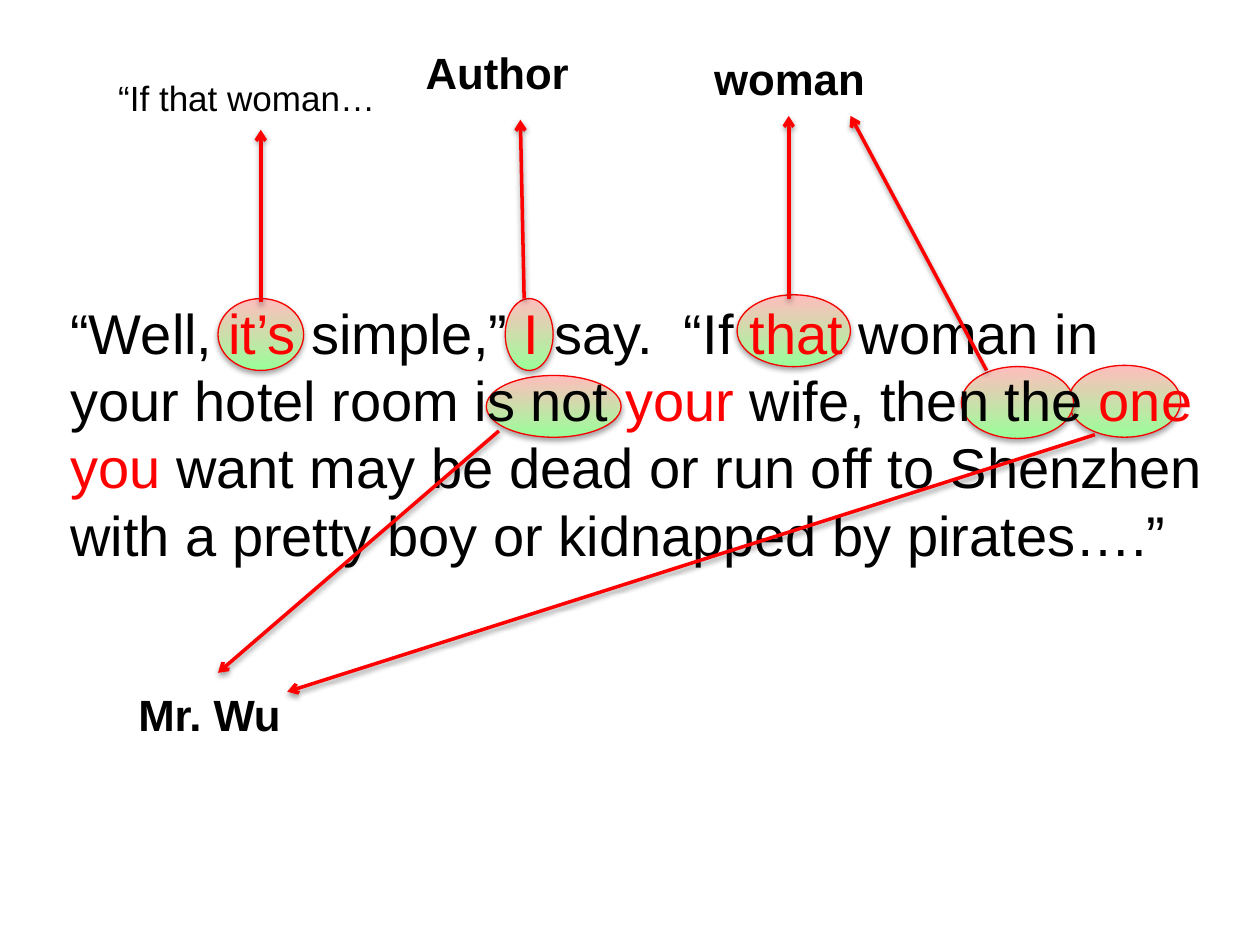
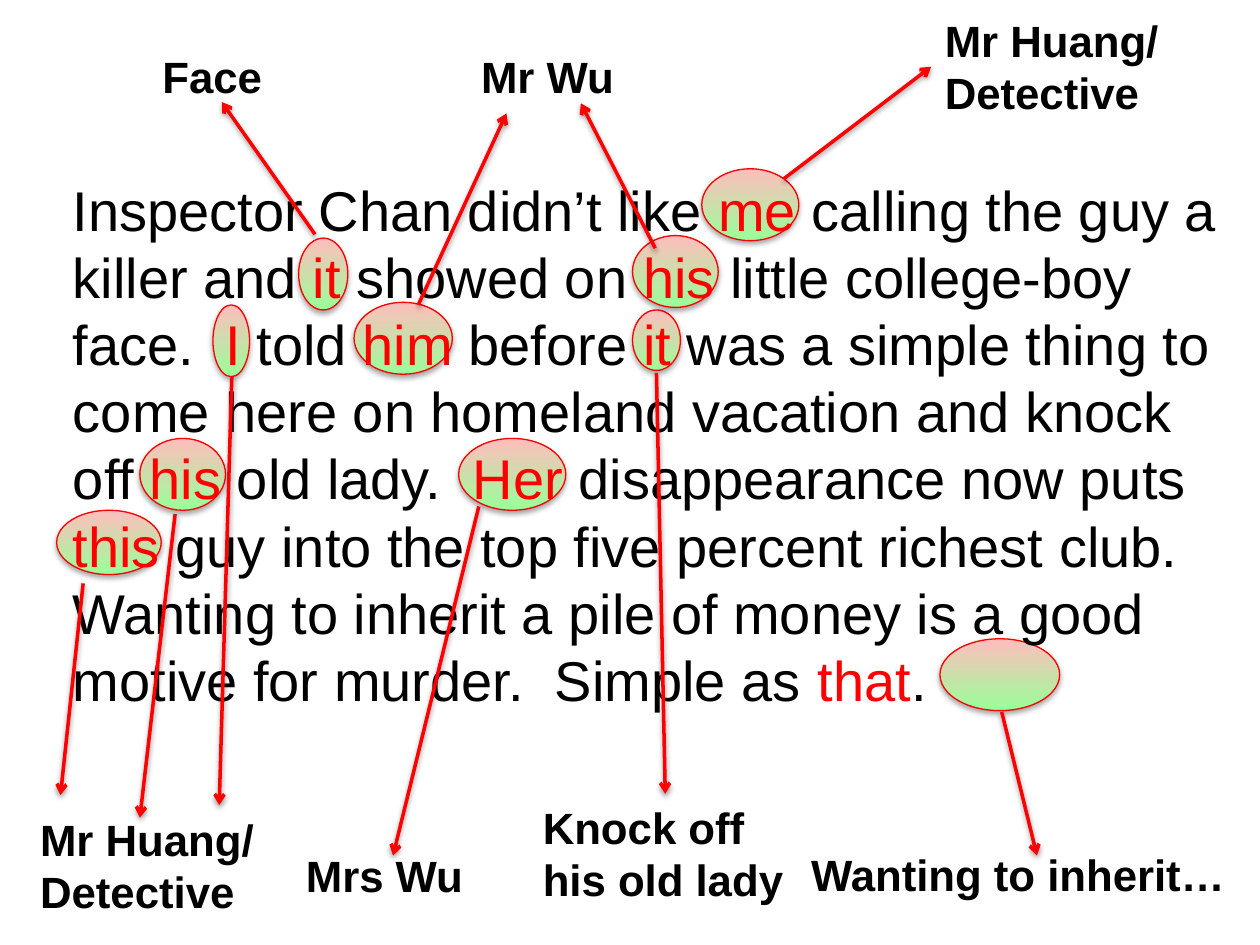
from dataclasses import dataclass

from lxml import etree
from pptx import Presentation
from pptx import util as u
from pptx.dml.color import RGBColor
from pptx.enum import shapes, text
from pptx.oxml.ns import qn


@dataclass(frozen=True)
class Theme:
    font: str = "Arial"
    ink: str = "000000"
    reference: str = "FF0000"
    oval_line: str = "F90000"
    oval_bottom: str = "99FF99"
    oval_top: str = "FFBDBD"
    body_size: int = 32
    label_size: int = 25
    quote_size: int = 20
    leading: float = 1.2
    oval_line_width: float = 0.75
    arrow_width: float = 2
    shadow_blur: float = 3.15


THEME = Theme()
SLIDE_SIZE = 10, 7.5
OVAL_HEIGHT = 0.57
LABEL_HEIGHT = 0.75

# Lengths are inches. Words between asterisks are references, shown in red.
# ovals: left, top, width[, height]; labels: text, left, top, width[, height];
# arrows: start x, start y, end x, end y
SLIDES = [
    {
        "passage": "“Well, *it’s* simple,”* I *say.  “If *that* woman in your hotel room "
                   "is not *your* wife, then the *one you* want may be dead or run off to "
                   "Shenzhen with a pretty boy or kidnapped by pirates….”",
        "passage_at": (0.46, 2.32, 9.25, 2.36),
        "ovals": [
            (8.48, 2.9, 0.89), (7.63, 2.91, 0.89), (3.86, 2.98, 1.07, 0.49),
            (5.85, 2.34, 0.9), (4.01, 2.37, 0.38), (1.73, 2.37, 0.68),
        ],
        "quote": ("“If that woman…", 0.84, 0.56, 2.33, 0.44),
        "labels": [
            ("Author", 3.28, 0.2, 1.46),
            ("woman", 5.57, 0.24, 1.46),
            ("Mr. Wu", 1, 5.29, 1.46),
        ],
        "arrows": [
            (2.07, 2.4, 2.07, 1.03), (4.16, 2.37, 4.13, 0.95), (6.26, 2.37, 6.26, 0.92),
            (3.96, 3.42, 1.73, 5.34), (7.83, 2.94, 6.75, 0.92), (8.69, 3.45, 2.28, 5.49),
        ],
    },
    {
        "passage": "Inspector Chan didn’t like *me* calling the guy a killer and *it* showed "
                   "on *his* little college-boy face.  *I* told *him* before *it* was a simple "
                   "thing to come here on homeland vacation and knock off *his* old lady.  "
                   "*Her* disappearance now puts *this* guy into the top five percent richest "
                   "club.  Wanting to inherit a pile of money is a good motive for murder.  "
                   "Simple as *that*.",
        "passage_at": (0.48, 1.34, 9.35, 4.54),
        "ovals": [
            (7.46, 5.07, 0.95), (0.45, 4.05, 0.83, 0.51), (3.64, 3.48, 0.85),
            (1.11, 3.48, 0.68), (5.02, 2.46, 0.38, 0.48), (2.81, 2.4, 0.78),
            (1.69, 2.42, 0.29), (5.02, 1.87, 0.68), (2.37, 1.89, 0.39), (5.57, 1.34, 0.77),
        ],
        "labels": [
            ("Mr Huang/\nDetective", 7.4, 0.15, 2.15),
            ("Mrs Wu", 2.33, 6.57, 1.64),
            ("Face", 1.19, 0.23, 1.32),
            ("Knock off his old lady", 4.21, 6.3, 2.13, 0.94),
            ("Mr Wu", 3.72, 0.23, 1.32),
            ("Wanting to inherit…", 6.34, 6.56, 3.66),
            ("Mr Huang/\nDetective", 0.22, 6.49, 2.15),
        ],
        "arrows": [
            (6.22, 1.42, 7.39, 0.53), (5.2, 1.97, 4.61, 0.82), (2.5, 1.86, 1.76, 0.81),
            (1.84, 2.99, 1.74, 6.39), (3.32, 2.42, 4.02, 0.9), (5.21, 2.96, 5.28, 6.3),
            (1.39, 4.08, 1.11, 6.49), (0.66, 4.63, 0.48, 6.31), (3.8, 4.02, 3.12, 6.79),
            (7.95, 5.65, 8.23, 6.79),
        ],
    },
]


def color(code):
    return RGBColor.from_string(code)


def inches(*lengths):
    return [u.Inches(length) for length in lengths]


def add_shadow(item, distance, opacity):
    """Give a shape or connector a soft shadow straight below it."""
    effects = etree.SubElement(item._element.spPr, qn("a:effectLst"))
    shadow = etree.SubElement(
        effects, qn("a:outerShdw"), blurRad=str(u.Pt(THEME.shadow_blur)),
        dist=str(u.Pt(distance)), dir="5400000", rotWithShape="0")
    black = etree.SubElement(shadow, qn("a:srgbClr"), val=THEME.ink)
    etree.SubElement(black, qn("a:alpha"), val=str(opacity * 1000))


def set_line(item, code, width):
    item.line.color.rgb = color(code)
    item.line.width = u.Pt(width)


def add_oval(page, left, top, width, height=OVAL_HEIGHT):
    oval = page.shapes.add_shape(shapes.MSO_SHAPE.OVAL, *inches(left, top, width, height))
    oval.fill.gradient()
    oval.fill.gradient_angle = 90
    for stop, code in zip(oval.fill.gradient_stops, (THEME.oval_bottom, THEME.oval_top)):
        stop.color.rgb = color(code)
    set_line(oval, THEME.oval_line, THEME.oval_line_width)
    add_shadow(oval, 1.8, 35)


def add_arrow(page, *ends):
    arrow = page.shapes.add_connector(shapes.MSO_CONNECTOR.STRAIGHT, *inches(*ends))
    set_line(arrow, THEME.reference, THEME.arrow_width)
    etree.SubElement(arrow.line._get_or_add_ln(), qn("a:tailEnd"), type="arrow")
    add_shadow(arrow, 1.6, 38)


def add_words(page, words, place, size, bold=False, anchor=text.MSO_ANCHOR.TOP):
    """Add a wrapped text box, with a paragraph per line and red marked words."""
    box = page.shapes.add_textbox(*inches(*place))
    frame = box.text_frame
    frame.word_wrap = True
    frame.vertical_anchor = anchor
    for number, line in enumerate(words.split("\n")):
        para = frame.add_paragraph() if number else frame.paragraphs[0]
        para.line_spacing = u.Pt(size * THEME.leading)
        para.font.name = THEME.font
        para.font.size = u.Pt(size)
        para.font.bold = bold
        for index, part in enumerate(line.split("*")):
            if part:
                span = para.add_run()
                span.text = part
                span.font.color.rgb = color(THEME.reference if index % 2 else THEME.ink)


def add_label(page, words, left, top, width, height=LABEL_HEIGHT):
    add_words(page, words, (left, top, width, height), THEME.label_size,
              bold=True, anchor=text.MSO_ANCHOR.MIDDLE)


def build_slide(deck, content):
    page = deck.slides.add_slide(deck.slide_layouts[6])
    for oval in content["ovals"]:
        add_oval(page, *oval)
    add_words(page, content["passage"], content["passage_at"], THEME.body_size)
    for arrow in content["arrows"]:
        add_arrow(page, *arrow)
    if "quote" in content:
        words, *place = content["quote"]
        add_words(page, words, place, THEME.quote_size)
    for label in content["labels"]:
        add_label(page, *label)


def main():
    deck = Presentation()
    deck.slide_width, deck.slide_height = inches(*SLIDE_SIZE)
    for content in SLIDES:
        build_slide(deck, content)
    deck.save("out.pptx")


if __name__ == "__main__":
    main()
